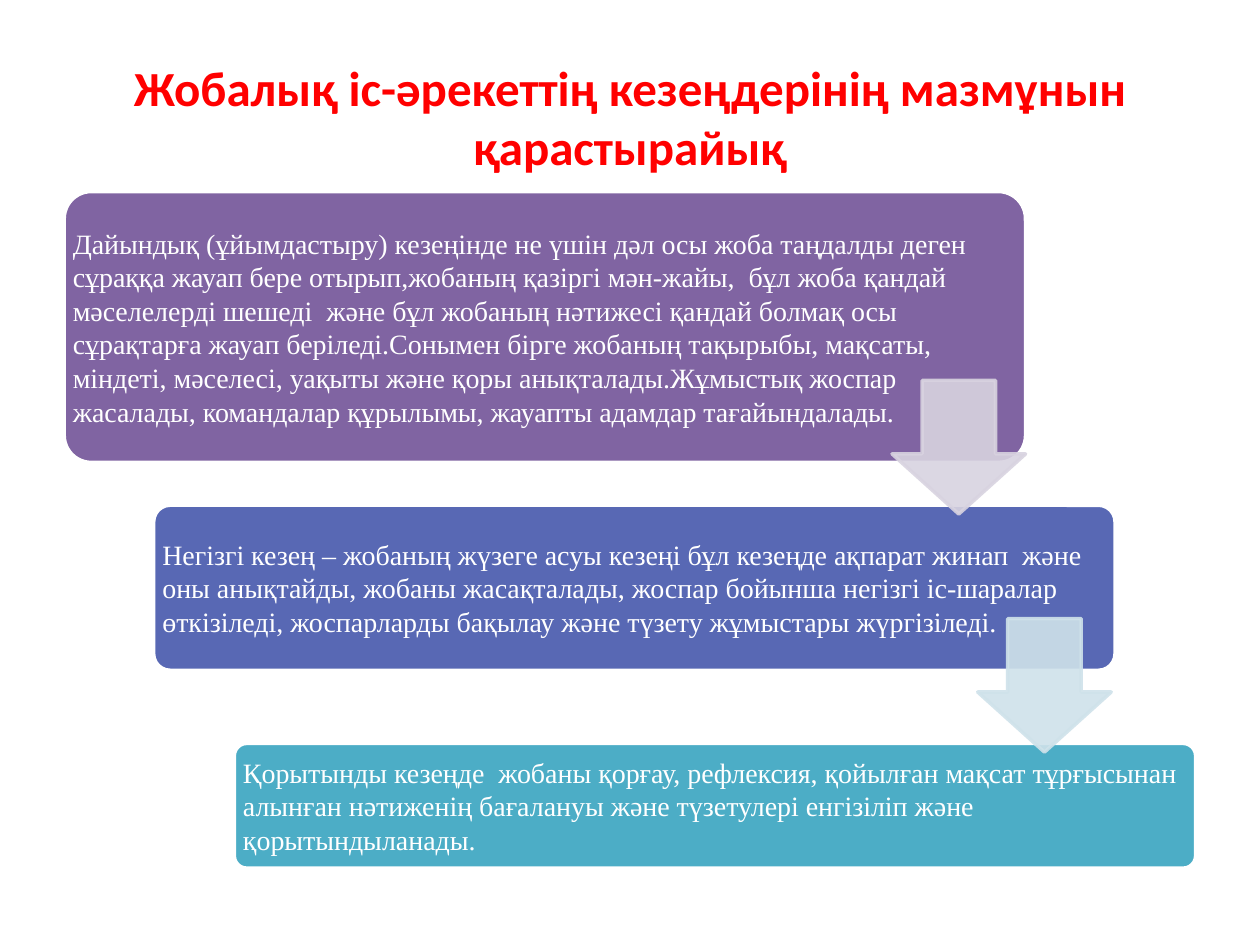
from lxml.etree import SubElement
from pptx import Presentation
from pptx.dml.color import RGBColor
from pptx.enum.shapes import MSO_SHAPE
from pptx.enum.text import MSO_ANCHOR, PP_ALIGN
from pptx.oxml.ns import qn
from pptx.util import Inches, Pt

deck = Presentation()
deck.slide_width, deck.slide_height = Inches(10), Inches(7.5)
slide = deck.slides.add_slide(deck.slide_layouts[6])
COL, ROW = deck.slide_width / 100, deck.slide_height / 75


def tint(color, hex_code):
    color.rgb = RGBColor.from_string(hex_code)


def write(frame, text, font, size, color, bold=False, align=PP_ALIGN.LEFT):
    frame.word_wrap = True
    frame.vertical_anchor = MSO_ANCHOR.MIDDLE
    paragraph = frame.paragraphs[0]
    paragraph.alignment = align
    run = paragraph.add_run()
    run.text = text
    run.font.name, run.font.size, run.font.bold = font, Pt(size), bold
    tint(run.font.color, color)


heading = slide.shapes.add_textbox(int(5 * COL), int(3 * ROW), int(90 * COL), int(12.5 * ROW))
write(heading.text_frame, "Жобалық іс-әрекеттің кезеңдерінің мазмұнын қарастырайық",
      font="Calibri", size=28, color="FF0000", bold=True, align=PP_ALIGN.CENTER)

stages = [
    (5.1, 15.2, 21.5, "8064A2",
     "Дайындық (ұйымдастыру) кезеңінде не үшін дәл осы жоба таңдалды деген сұраққа жауап бере "
     "отырып,жобаның қазіргі мән-жайы,  бұл жоба қандай мәселелерді шешеді  және бұл жобаның "
     "нәтижесі қандай болмақ осы сұрақтарға жауап беріледі.Сонымен бірге жобаның тақырыбы, "
     "мақсаты, міндеті, мәселесі, уақыты және қоры анықталады.Жұмыстық жоспар жасалады, "
     "командалар құрылымы, жауапты адамдар тағайындалады."),
    (12.2, 40.1, 13.1, "5868B4",
     "Негізгі кезең – жобаның жүзеге асуы кезеңі бұл кезеңде ақпарат жинап  және оны анықтайды, "
     "жобаны жасақталады, жоспар бойынша негізгі іс-шаралар өткізіледі, жоспарларды бақылау "
     "және түзету жұмыстары жүргізіледі."),
    (18.6, 59, 9.9, "4CADC6",
     "Қорытынды кезеңде  жобаны қорғау, рефлексия, қойылған мақсат тұрғысынан алынған "
     "нәтиженің бағалануы және түзетулері енгізіліп және  қорытындыланады."),
]
for left, top, height, color, text in stages:
    stage = slide.shapes.add_shape(MSO_SHAPE.ROUNDED_RECTANGLE, int(left * COL), int(top * ROW),
                                   int(76.3 * COL), int(height * ROW))
    stage.adjustments[0] = 0.1
    stage.shadow.inherit = False
    stage.fill.solid()
    tint(stage.fill.fore_color, color)
    tint(stage.line.color, "FFFFFF")
    stage.line.width = Pt(2)
    frame = stage.text_frame
    corner_inset = 0.03 * height
    frame.margin_left = frame.margin_right = int((0.7 - corner_inset) * COL)
    frame.margin_top = frame.margin_bottom = int((0.7 - corner_inset) * ROW)
    write(frame, text, font="Times New Roman", size=16, color="FFFFFF")

for left, top, color in [(70.8, 30.2, "D8D3E0"), (77.6, 49.1, "CFE2EA")]:
    arrow = slide.shapes.add_shape(MSO_SHAPE.DOWN_ARROW, int(left * COL), int(top * ROW),
                                   int(10.6 * COL), int(10.6 * ROW))
    arrow.adjustments[0], arrow.adjustments[1] = 0.55, 0.45
    arrow.shadow.inherit = False
    arrow.fill.solid()
    tint(arrow.fill.fore_color, color)
    tint(arrow.line.color, color)
    arrow.line.width = Pt(2)
    for paint in arrow.element.spPr.iter(qn("a:srgbClr")):
        SubElement(paint, qn("a:alpha")).set("val", "90000")

deck.save("out.pptx")
